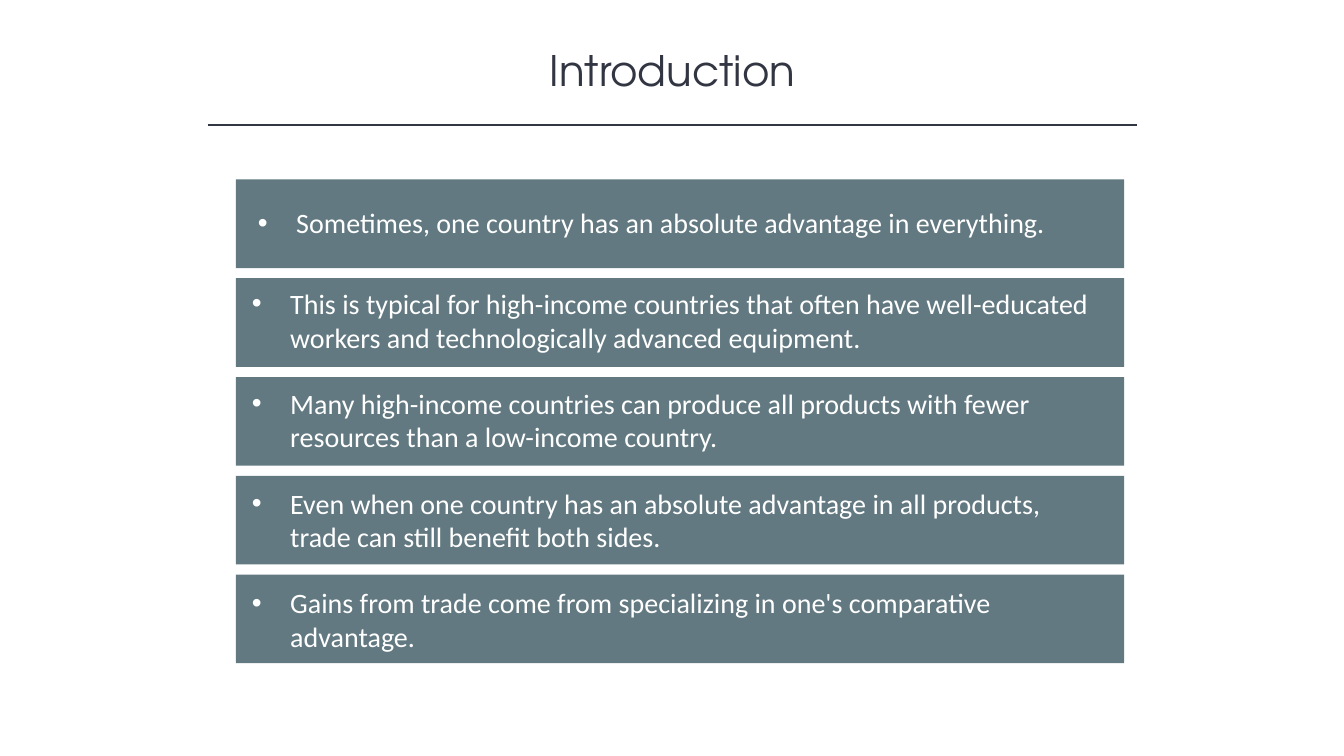
from lxml.etree import SubElement
from pptx import Presentation
from pptx.dml.color import RGBColor
from pptx.enum.shapes import MSO_CONNECTOR as Connector, MSO_SHAPE as Shape
from pptx.enum.text import MSO_ANCHOR as Anchor, PP_ALIGN as Align
from pptx.oxml.ns import qn
from pptx.util import Pt

PX = 9144  # EMU per px, 100 px to the inch
INK, SLATE, WHITE = "323542", "627981", "FFFFFF"
TITLE_FONT, BODY_FONT = "TeX Gyre Adventor", "Calibri"

BAND_LEFT, BAND_TOP, BAND_WIDTH, BAND_HEIGHT, BAND_STEP = 234, 178, 881, 88, 98
TEXT_LEFT, TEXT_TOP, TEXT_WIDTH, TEXT_HEIGHT, TEXT_STEP = 240, 180, 854, 77, 99
# The single-line statement sits in a shorter, slightly shifted box
SHORT_LEFT, SHORT_TOP, SHORT_HEIGHT = 246, 199, 44
INDENT = 38

STATEMENTS = [
    "Sometimes, one country has an absolute advantage in everything.",
    "This is typical for high-income countries that often have well-educated "
    "workers and technologically advanced equipment.",
    "Many high-income countries can produce all products with fewer resources "
    "than a low-income country.",
    "Even when one country has an absolute advantage in all products, trade can "
    "still benefit both sides.",
    "Gains from trade come from specializing in one's comparative advantage.",
]


def px(*lengths):
    return [length * PX for length in lengths]


def color(value):
    return RGBColor.from_string(value)


def write(frame, text, font, size, ink, align):
    frame.word_wrap = True
    frame.vertical_anchor = Anchor.MIDDLE
    frame.text = text
    para = frame.paragraphs[0]
    para.alignment = align
    span = para.runs[0].font
    span.name, span.size = font, Pt(size)
    span.color.rgb = color(ink)
    return para


def add_title(page, text, left, top, width, height):
    title = page.shapes.title
    title.left, title.top, title.width, title.height = px(left, top, width, height)
    write(title.text_frame, text, TITLE_FONT, 30, INK, Align.CENTER)


def add_rule(page, left, right, y):
    rule = page.shapes.add_connector(Connector.STRAIGHT, *px(left, y, right, y))
    rule.line.color.rgb = color(INK)
    rule.line.width = Pt(1)
    SubElement(rule._element.spPr, qn("a:effectLst"))


def add_box(group, left, top, width, height):
    box = group.shapes.add_shape(Shape.RECTANGLE, *px(left, top, width, height))
    box.shadow.inherit = False
    box.fill.solid()
    box.fill.fore_color.rgb = color(SLATE)
    box.line.fill.background()
    return box


def add_bullet(para):
    props = para._p.get_or_add_pPr()
    props.set("marL", str(INDENT * PX))
    props.set("indent", str(-INDENT * PX))
    SubElement(props, qn("a:buFont"), typeface="Arial")
    SubElement(props, qn("a:buChar"), char="•")


def add_statement(page, index, text):
    group = page.shapes.add_group_shape()
    add_box(group, BAND_LEFT, BAND_TOP + index * BAND_STEP, BAND_WIDTH, BAND_HEIGHT)
    if index == 0:
        left, top, height = SHORT_LEFT, SHORT_TOP, SHORT_HEIGHT
    else:
        left, top, height = TEXT_LEFT, TEXT_TOP + index * TEXT_STEP, TEXT_HEIGHT
    box = add_box(group, left, top, TEXT_WIDTH, height)
    add_bullet(write(box.text_frame, text, BODY_FONT, 20, WHITE, Align.LEFT))


def main():
    deck = Presentation()
    deck.slide_width, deck.slide_height = px(1333, 750)
    page = deck.slides.add_slide(deck.slide_layouts[5])

    # Heading
    add_title(page, "Introduction", 167, 39, 1000, 61)
    add_rule(page, 206, 1128, 124)

    # Stacked statements
    for index, text in enumerate(STATEMENTS):
        add_statement(page, index, text)

    deck.save("out.pptx")


if __name__ == "__main__":
    main()
